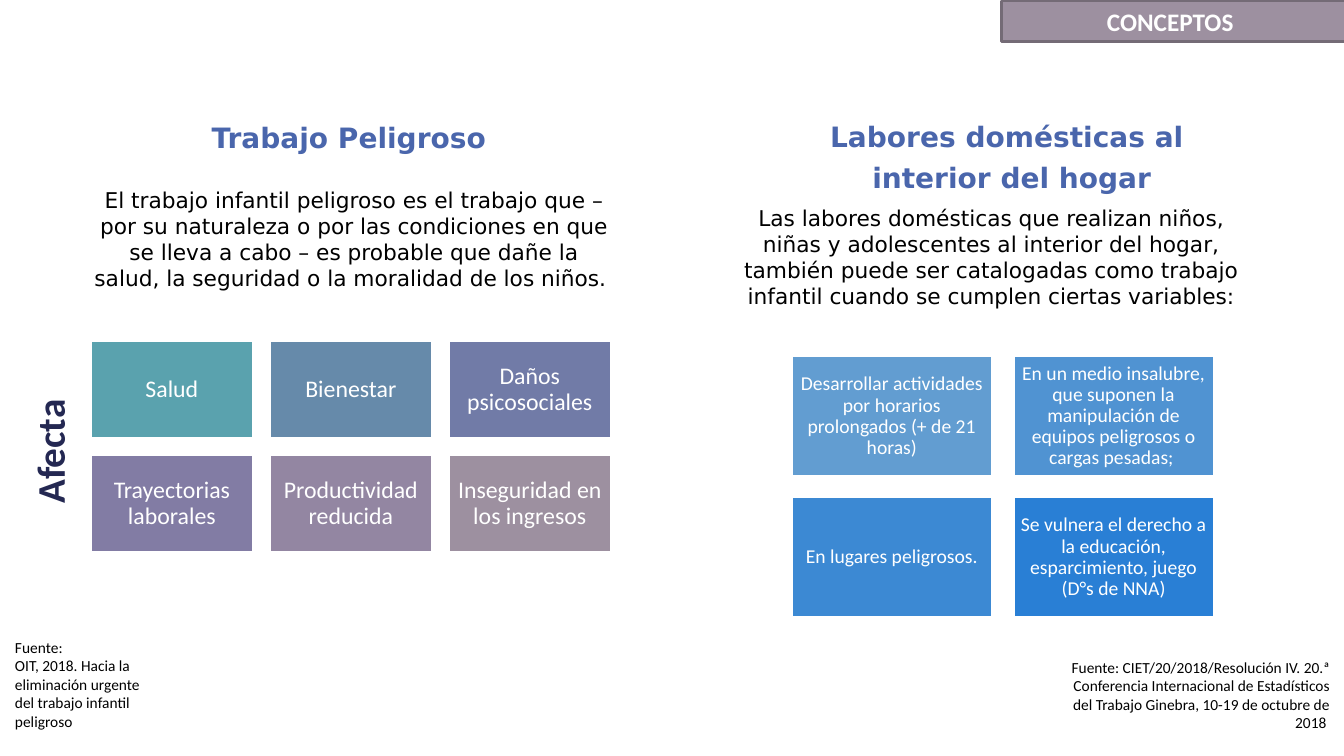
from dataclasses import dataclass

from lxml.etree import SubElement
from pptx import Presentation
from pptx.dml.color import RGBColor
from pptx.enum.shapes import MSO_SHAPE
from pptx.enum.text import MSO_ANCHOR, MSO_AUTO_SIZE, PP_ALIGN
from pptx.oxml.ns import qn
from pptx.util import Inches, Pt


@dataclass(frozen=True)
class Theme:
    """Colours, fonts and type sizes of the slide."""
    white: str = "FFFFFF"
    ink: str = "000000"
    heading: str = "4A66AC"
    side: str = "242852"
    banner: str = "9D90A0"
    banner_line: str = "746B76"
    effects: tuple = ("5AA2AE", "668AAA", "717BA7", "827CA4", "9386A2", "9D90A0")
    conditions: tuple = ("629DD1", "5093D2", "3C89D3", "297FD5")
    wide_font: str = "DejaVu Sans"
    font: str = "Calibri"
    heading_size: float = 20
    body_size: float = 15.5
    side_size: float = 28
    banner_size: float = 18
    effect_size: float = 17
    condition_size: float = 14
    source_size: float = 11


THEME = Theme()

EFFECTS = ("Salud", "Bienestar", "Daños psicosociales", "Trayectorias laborales",
           "Productividad reducida", "Inseguridad en los ingresos")
CONDITIONS = (
    "Desarrollar actividades por horarios prolongados (+ de 21 horas)",
    "En un medio insalubre, que suponen la manipulación de equipos peligrosos o cargas pesadas; ",
    "En lugares peligrosos.",
    "Se vulnera el derecho a la educación, esparcimiento, juego (D°s de NNA)",
)
HAZARD = ("El trabajo infantil peligroso es el trabajo que – por su naturaleza o por las "
          "condiciones en que se lleva a cabo – es probable que dañe la salud, la seguridad "
          "o la moralidad de los niños. ")
CHORES = ("Las labores domésticas que realizan niños, niñas y adolescentes al interior del "
          "hogar, también puede ser catalogadas como trabajo infantil cuando se cumplen "
          "ciertas variables:")
HAZARD_SOURCE = ("Fuente:", "OIT, 2018. Hacia la eliminación urgente del trabajo infantil peligroso")
CHORES_SOURCE = ("Fuente: CIET/20/2018/Resolución IV. 20.ª Conferencia Internacional de "
                 "Estadísticos del Trabajo Ginebra, 10-19 de octubre de 2018 ")


def write(holder, *lines, size, color=THEME.ink, font=THEME.font, bold=False,
          align=PP_ALIGN.CENTER, anchor=MSO_ANCHOR.TOP, spacing=1.0, gap=0, inset=None):
    """Fill a shape with formatted paragraphs."""
    frame = holder.text_frame
    frame.word_wrap = True
    frame.auto_size = MSO_AUTO_SIZE.NONE
    frame.vertical_anchor = anchor
    if inset is not None:
        frame.margin_left = frame.margin_right = Inches(inset)
        frame.margin_top = frame.margin_bottom = Inches(inset)
    for number, line in enumerate(lines):
        paragraph = frame.add_paragraph() if number else frame.paragraphs[0]
        paragraph.alignment = align
        paragraph.line_spacing = spacing
        paragraph.space_before = Pt(gap if number else 0)
        if holder.is_placeholder:
            properties = paragraph._p.get_or_add_pPr()
            properties.set("marL", "0")
            properties.set("indent", "0")
            SubElement(properties, qn("a:buNone"))
        run = paragraph.add_run()
        run.text = line
        run.font.name = font
        run.font.size = Pt(size)
        run.font.bold = bold
        run.font.color.rgb = RGBColor.from_string(color)


def paint(shape, fill, line):
    """Give a shape a solid fill and a two-point outline."""
    shape.fill.solid()
    shape.fill.fore_color.rgb = RGBColor.from_string(fill)
    shape.line.color.rgb = RGBColor.from_string(line)
    shape.line.width = Pt(2)


def place(holder, left, top, width, height):
    """Move and size a placeholder."""
    holder.left, holder.top = Inches(left), Inches(top)
    holder.width, holder.height = Inches(width), Inches(height)
    return holder


def add_note(slide, left, top, width, height, *lines, **style):
    """Add a free text box."""
    note = slide.shapes.add_textbox(Inches(left), Inches(top), Inches(width), Inches(height))
    write(note, *lines, **style)
    return note


def add_cards(slide, labels, fills, columns, origin, card, pitch, size, inset):
    """Lay out coloured cards row by row."""
    for number, (label, fill) in enumerate(zip(labels, fills)):
        row, column = divmod(number, columns)
        tile = slide.shapes.add_shape(
            MSO_SHAPE.RECTANGLE,
            Inches(origin[0] + column * pitch[0]), Inches(origin[1] + row * pitch[1]),
            Inches(card[0]), Inches(card[1]))
        tile.shadow.inherit = False
        paint(tile, fill, THEME.white)
        write(tile, label, size=size, color=THEME.white, anchor=MSO_ANCHOR.MIDDLE,
              spacing=0.9, inset=inset)


def main():
    """Build the slide and save it."""
    deck = Presentation()
    deck.slide_width, deck.slide_height = Inches(13.33), Inches(7.5)
    slide = deck.slides.add_slide(deck.slide_layouts[4])
    banner, hazard_title, hazard_text, chores_title, chores_text = slide.placeholders

    place(banner, 9.93, 0.01, 3.41, 0.4)
    paint(banner, THEME.banner, THEME.banner_line)
    write(banner, "CONCEPTOS ", size=THEME.banner_size, color=THEME.white, bold=True)

    heading = dict(size=THEME.heading_size, color=THEME.heading, font=THEME.wide_font,
                   bold=True, gap=5)
    write(place(hazard_title, 0.9, 1.15, 5.12, 0.52), "Trabajo Peligroso", **heading)
    write(place(chores_title, 6.73, 1.14, 6.61, 0.8),
          "Labores domésticas al ", "interior del hogar", **heading)

    body = dict(size=THEME.body_size, font=THEME.wide_font)
    write(place(hazard_text, 0.83, 1.8, 5.36, 1.21), HAZARD, **body)
    write(place(chores_text, 7.15, 1.98, 5.36, 1.21), CHORES, **body)

    side = add_note(slide, -0.56, 4.15, 2.1, 0.57, "Afecta ", size=THEME.side_size,
                    color=THEME.side, bold=True)
    side.rotation = 270

    add_cards(slide, EFFECTS, THEME.effects, 3, (0.9, 3.38), (1.61, 0.97), (1.775, 1.13),
              THEME.effect_size, 0.07)
    add_cards(slide, CONDITIONS, THEME.conditions, 2, (7.85, 3.53), (1.99, 1.2), (2.2, 1.4),
              THEME.condition_size, 0.06)

    add_note(slide, 0.05, 6.28, 1.45, 1.03, *HAZARD_SOURCE, size=THEME.source_size,
             align=PP_ALIGN.LEFT)
    add_note(slide, 10.38, 6.48, 2.91, 0.84, CHORES_SOURCE, size=THEME.source_size,
             align=PP_ALIGN.RIGHT)
    deck.save("out.pptx")


if __name__ == "__main__":
    main()
